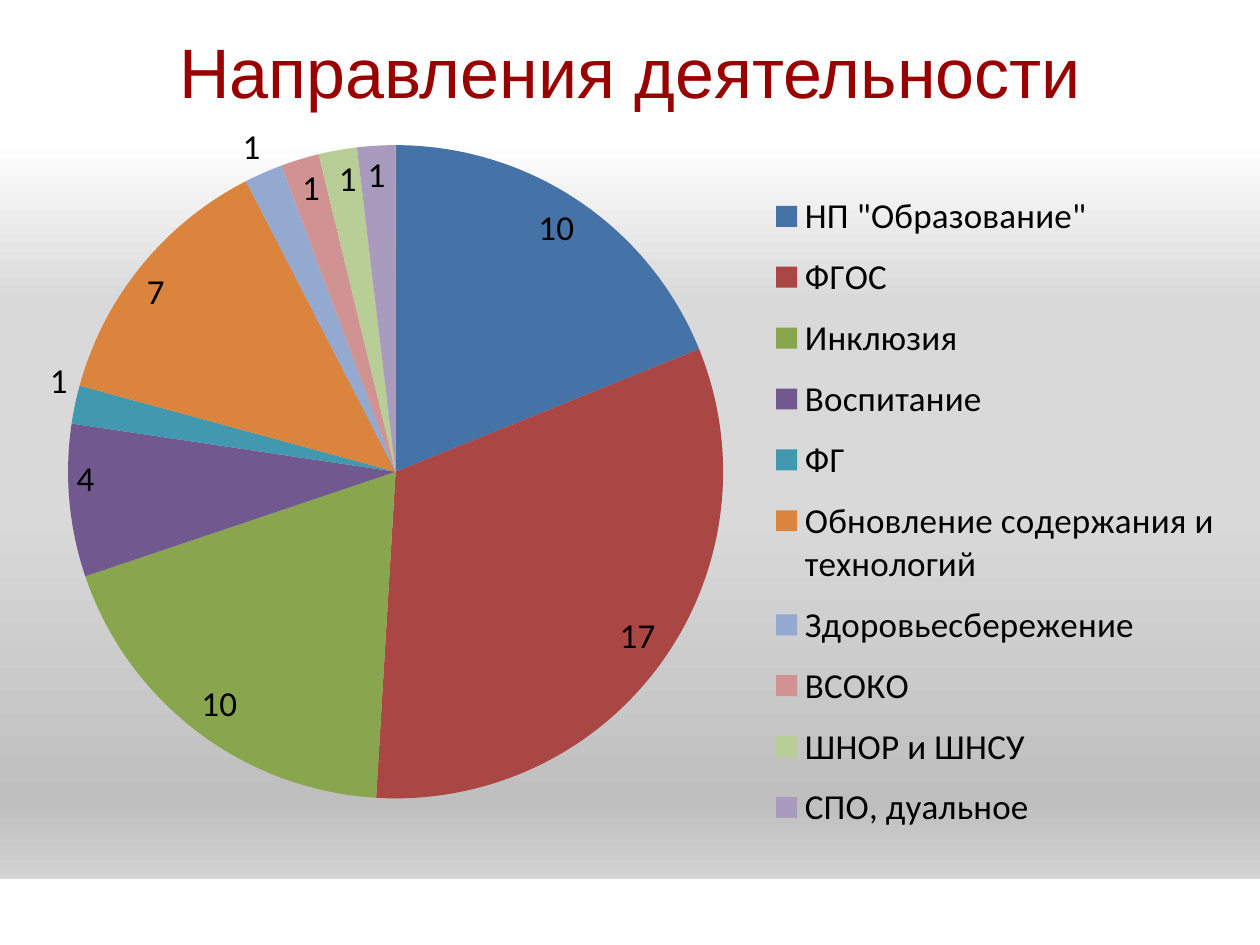
from lxml.etree import SubElement
from pptx import Presentation
from pptx.chart.data import CategoryChartData
from pptx.dml.color import RGBColor
from pptx.enum.chart import XL_CHART_TYPE, XL_LABEL_POSITION, XL_LEGEND_POSITION
from pptx.enum.shapes import MSO_SHAPE
from pptx.enum.text import MSO_ANCHOR, PP_ALIGN
from pptx.oxml import parse_xml
from pptx.oxml.ns import nsdecls, qn
from pptx.util import Inches, Pt

WHITE = RGBColor(0xFF, 0xFF, 0xFF)
BLACK = RGBColor(0x00, 0x00, 0x00)
DARK_RED = RGBColor(0x99, 0x00, 0x00)
LIGHT_GRAY = RGBColor(0xD9, 0xD9, 0xD9)
MID_GRAY = RGBColor(0xBF, 0xBF, 0xBF)
PALE_GRAY = RGBColor(0xE6, 0xE6, 0xE6)

BACKDROP = [(0, WHITE), (15, WHITE), (32, LIGHT_GRAY),
            (54, LIGHT_GRAY), (85, MID_GRAY), (100, PALE_GRAY)]

# Direction, number of items, slice colour
DIRECTIONS = [
    ('НП "Образование"', 10, RGBColor(0x45, 0x72, 0xA7)),
    ("ФГОС", 17, RGBColor(0xAA, 0x46, 0x43)),
    ("Инклюзия", 10, RGBColor(0x89, 0xA5, 0x4E)),
    ("Воспитание", 4, RGBColor(0x71, 0x58, 0x8F)),
    ("ФГ", 1, RGBColor(0x41, 0x98, 0xAF)),
    ("Обновление содержания и технологий", 7, RGBColor(0xDB, 0x84, 0x3D)),
    ("Здоровьесбережение", 1, RGBColor(0x93, 0xA9, 0xCF)),
    ("ВСОКО", 1, RGBColor(0xD1, 0x93, 0x92)),
    ("ШНОР и ШНСУ", 1, RGBColor(0xB9, 0xCD, 0x96)),
    ("СПО, дуальное", 1, RGBColor(0xA9, 0x9B, 0xBD)),
]
OUTSIDE_LABELS = ("ФГ", "Здоровьесбережение")


def style_font(font, name="Calibri", size=20, color=BLACK):
    font.name, font.size, font.bold = name, Pt(size), False
    font.color.rgb = color


def write_text(frame, text, align=PP_ALIGN.CENTER, outline=None, **style):
    para = frame.paragraphs[0]
    para.alignment = align
    span = para.add_run()
    span.text = text
    style_font(span.font, **style)
    if outline:
        line = parse_xml(
            f'<a:ln {nsdecls("a")} w="{Pt(outline)}"><a:solidFill>'
            f'<a:srgbClr val="{style["color"]}"/></a:solidFill></a:ln>')
        span.font._element.insert(0, line)


def manual_layout(parent, before, inner=False, **shares):
    """Place a chart part by shares of the chart's size."""
    for old in parent.findall(qn("c:layout")):
        parent.remove(old)
    layout = parse_xml(f'<c:layout {nsdecls("c")}><c:manualLayout/></c:layout>')
    settings = {"layoutTarget": "inner"} if inner else {}
    settings.update(xMode="edge", yMode="edge", **shares)
    for tag, value in settings.items():
        SubElement(layout[0], qn(f"c:{tag}")).set("val", str(value))
    parent.find(qn(before)).addprevious(layout)


class SlideBuilder:
    def __init__(self, deck):
        self.width, self.height = deck.slide_width, deck.slide_height
        self.page = deck.slides.add_slide(deck.slide_layouts[6])

    def area(self, left, top, width, height):
        return (int(left * self.width), int(top * self.height),
                int(width * self.width), int(height * self.height))

    def background(self, stops):
        fill = self.page.background.fill
        fill.gradient()
        fill.gradient_angle = 270
        stop_list = self.page.background._cSld.find(".//" + qn("a:gsLst"))
        stop_list.clear()
        for percent, color in stops:
            stop = SubElement(stop_list, qn("a:gs"), pos=str(percent * 1000))
            SubElement(stop, qn("a:srgbClr"), val=str(color))

    def band(self, *shares):
        shape = self.page.shapes.add_shape(MSO_SHAPE.RECTANGLE, *self.area(*shares))
        shape.shadow.inherit = False
        shape.fill.solid()
        shape.fill.fore_color.rgb = WHITE
        shape.line.fill.background()
        return shape

    def title(self, text, *shares):
        box = self.page.shapes.add_textbox(*self.area(*shares))
        box.fill.solid()
        box.fill.fore_color.rgb = WHITE
        frame = box.text_frame
        frame.word_wrap = True
        frame.vertical_anchor = MSO_ANCHOR.MIDDLE
        write_text(frame, text, name="Arial", size=40, color=DARK_RED, outline=0.75)

    def pie(self, rows, *shares):
        data = CategoryChartData()
        data.categories = [name for name, _, _ in rows]
        data.add_series("Series 1", [value for _, value, _ in rows])
        chart = self.page.shapes.add_chart(
            XL_CHART_TYPE.PIE, *self.area(*shares), data).chart
        chart.has_title = False
        style_font(chart.font)

        # Legend
        chart.has_legend = True
        chart.legend.position = XL_LEGEND_POSITION.RIGHT
        chart.legend.include_in_layout = False
        manual_layout(chart.legend._element, "c:overlay", x=0.6, y=0.07, w=0.38, h=0.9)

        # Slices and their values
        plot = chart.plots[0]
        plot.vary_by_categories = True
        manual_layout(plot._element.getparent(), "c:pieChart", inner=True,
                      x=0.054, y=0.026, w=0.52, h=0.88)
        plot.has_data_labels = True
        labels = plot.data_labels
        labels.show_value, labels.show_percentage = True, False
        labels.position = XL_LABEL_POSITION.INSIDE_END
        style_font(labels.font)
        for index, (name, _, color) in enumerate(rows):
            point = plot.series[0].points[index]
            point.format.fill.solid()
            point.format.fill.fore_color.rgb = color
            label = point.data_label
            style_font(label.font)
            label.position = (XL_LABEL_POSITION.OUTSIDE_END if name in OUTSIDE_LABELS
                              else XL_LABEL_POSITION.INSIDE_END)


def main():
    deck = Presentation()
    deck.slide_width, deck.slide_height = Inches(10), Inches(7.5)
    slide = SlideBuilder(deck)
    slide.background(BACKDROP)
    slide.band(0, 0.93, 1, 0.07)
    slide.title("Направления деятельности", 0, 0, 1, 0.15)
    slide.pie(DIRECTIONS, 0, 0.13, 1, 0.79)
    deck.save("out.pptx")


if __name__ == "__main__":
    main()
